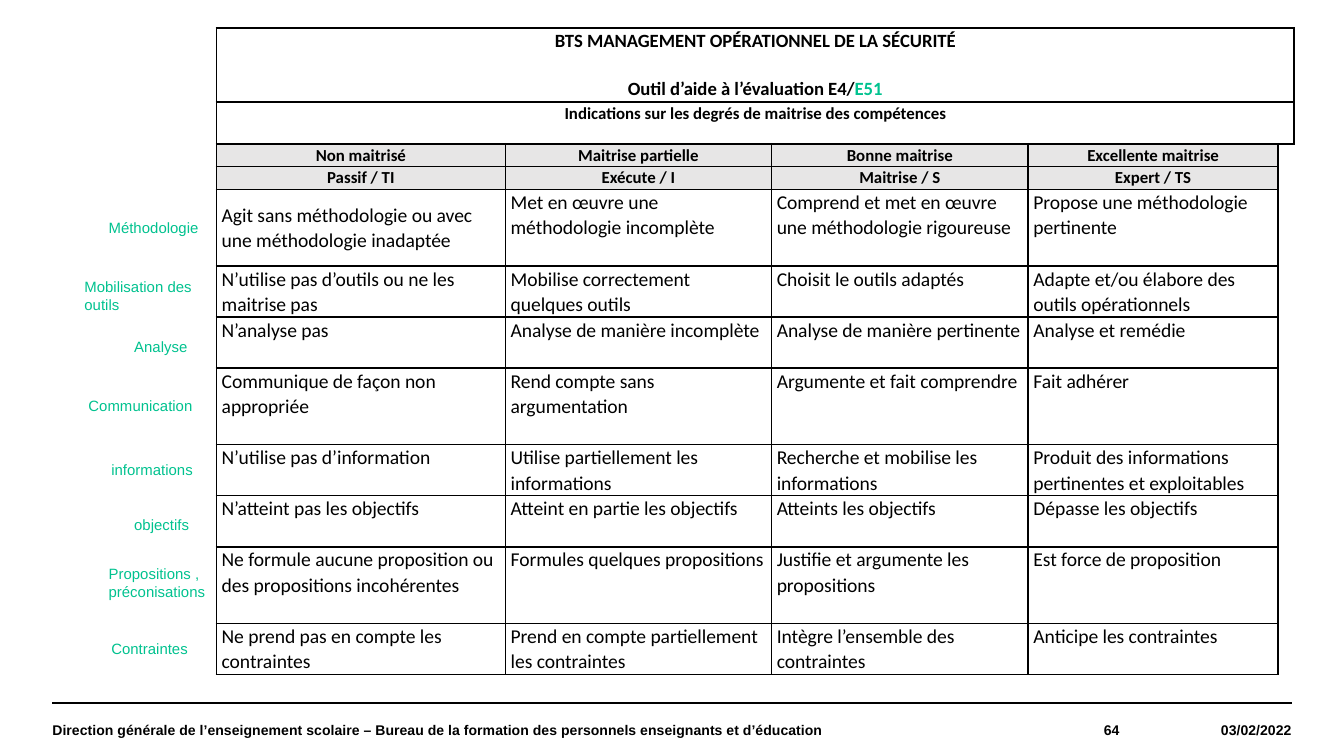
"""Build the evaluation grid slide for the BTS security management course."""
from dataclasses import dataclass
from itertools import accumulate

from pptx import Presentation
from pptx.dml.color import RGBColor
from pptx.enum.shapes import MSO_CONNECTOR as Connector
from pptx.enum.text import MSO_ANCHOR as Anchor, PP_ALIGN as Align
from pptx.oxml.xmlchemy import OxmlElement
from pptx.util import Inches, Pt


@dataclass(frozen=True)
class Theme:
    black: str = "000000"
    green: str = "00C28F"
    grey: str = "E7E6E6"
    table_font: str = "Calibri"
    side_font: str = "Arial"
    title: float = 10
    heading: float = 9
    body: float = 10.5
    label: float = 8
    footer: float = 7.5
    border: float = 1
    rule: float = 0.8
    spacing: float = 1.07
    plain_table: str = "{2D5ABB26-0587-4C30-8999-92F81FD0307C}"


THEME = Theme()
WIDTH, MARGIN = 10, 0.39
HEIGHT = WIDTH * 9 / 16

TITLE = ["BTS MANAGEMENT OPÉRATIONNEL DE LA SÉCURITÉ", "Outil d’aide à l’évaluation E4/"]
EXAM = "E51"
SUBTITLE = "Indications sur les degrés de maitrise des compétences"
LEVELS = [
    ("Non maitrisé", "Maitrise partielle", "Bonne maitrise", "Excellente maitrise"),
    ("Passif / TI", "Exécute / I", "Maitrise / S", "Expert / TS"),
]
SKILLS = [
    ("Agit sans méthodologie ou avec une méthodologie inadaptée",
     "Met en œuvre une méthodologie incomplète",
     "Comprend et met en œuvre une méthodologie rigoureuse",
     "Propose une méthodologie pertinente"),
    ("N’utilise pas d’outils ou ne les maitrise pas",
     "Mobilise correctement quelques outils",
     "Choisit le outils adaptés",
     "Adapte et/ou élabore des outils opérationnels"),
    ("N’analyse pas", "Analyse de manière incomplète",
     "Analyse de manière pertinente", "Analyse et remédie"),
    ("Communique de façon non appropriée", "Rend compte sans argumentation",
     "Argumente et fait comprendre", "Fait adhérer"),
    ("N’utilise pas d’information", "Utilise partiellement les informations",
     "Recherche et mobilise les informations",
     "Produit des informations pertinentes et exploitables"),
    ("N’atteint pas les objectifs", "Atteint en partie les objectifs",
     "Atteints les objectifs", "Dépasse les objectifs"),
    ("Ne formule aucune proposition ou des propositions incohérentes",
     "Formules quelques propositions",
     "Justifie et argumente les propositions", "Est force de proposition"),
    ("Ne prend pas en compte les contraintes",
     "Prend en compte partiellement les contraintes",
     "Intègre l’ensemble des contraintes", "Anticipe les contraintes"),
]
CRITERIA = [
    ("Méthodologie", 0.71, 0, 1),
    ("Mobilisation des outils", 0.53, 0.03, 2),
    ("Analyse", 0.9, 0.03, 1),
    ("Communication", 0.56, 0, 1),
    ("informations", 0.73, 0, 1),
    ("objectifs", 0.9, 0.03, 1),
    ("Propositions , préconisations", 0.71, -0.02, 2),
    ("Contraintes", 0.73, 0, 1),
]
FOOTER = [
    ("Direction générale de l’enseignement scolaire – Bureau de la formation "
     "des personnels enseignants et d’éducation", 6.46, Align.LEFT),
    ("64", 1.48, Align.RIGHT),
    ("03/02/2022", 1.28, Align.RIGHT),
]

GRID_LEFT, GRID_TOP = 1.61, 0.21
COLUMNS = [2.15, 1.98, 1.91, 1.86, 0.09]
SHORT, TALL = 0.38, 0.57
HEAD_ROWS = [0.55, 0.31, 0.17, 0.17]
ROWS = HEAD_ROWS + [TALL, SHORT, SHORT, TALL, SHORT, SHORT, TALL, SHORT]
ROW_TOPS = [GRID_TOP, *(GRID_TOP + bottom for bottom in accumulate(ROWS))]
LABEL_WIDTH, LABEL_HEIGHTS = 1.26, {1: 0.24, 2: 0.37}
FOOTER_TOP = 5.23
SIDES = {"left": "a:lnL", "right": "a:lnR", "top": "a:lnT", "bottom": "a:lnB"}


def style(font, family, size, color, bold=False):
    font.name, font.size, font.bold = family, Pt(size), bold
    font.color.rgb = RGBColor.from_string(color)


def add_text(slide, wording, box, size, color, bold=False, align=Align.LEFT):
    text = slide.shapes.add_textbox(*map(Inches, box)).text_frame
    text.word_wrap = True
    text.text = wording
    text.paragraphs[0].alignment = align
    style(text.paragraphs[0].runs[0].font, THEME.side_font, size, color, bold)
    return text


def outline(cell, sides):
    properties = cell._tc.get_or_add_tcPr()
    for side, tag in SIDES.items():
        edge = OxmlElement(tag)
        edge.set("w", str(Pt(THEME.border)))
        paint = OxmlElement("a:solidFill" if side in sides else "a:noFill")
        if side in sides:
            color = OxmlElement("a:srgbClr")
            color.set("val", THEME.black)
            paint.append(color)
        edge.append(paint)
        properties.append(edge)


def prepare(cell, sides, fill=None):
    outline(cell, sides)
    cell.margin_left = cell.margin_right = Inches(0.04)
    cell.margin_top = cell.margin_bottom = 0
    if fill:
        cell.fill.solid()
        cell.fill.fore_color.rgb = RGBColor.from_string(fill)
    else:
        cell.fill.background()


def write(cell, wording, size, bold=False, align=Align.LEFT):
    cell.text_frame.text = wording
    for paragraph in cell.text_frame.paragraphs:
        paragraph.alignment, paragraph.line_spacing = align, THEME.spacing
        for run in paragraph.runs:
            style(run.font, THEME.table_font, size, THEME.black, bold)
        if not paragraph.runs:
            ending = OxmlElement("a:endParaRPr")
            ending.set("sz", "100")
            paragraph._p.append(ending)


def add_grid(slide):
    frame = slide.shapes.add_table(
        len(ROWS), len(COLUMNS), Inches(GRID_LEFT), Inches(GRID_TOP),
        Inches(sum(COLUMNS)), Inches(sum(ROWS)))
    grid = frame.table
    grid.first_row = grid.horz_banding = False
    grid._tbl.tblPr.find("{*}tableStyleId").text = THEME.plain_table
    for column, width in zip(grid.columns, COLUMNS):
        column.width = Inches(width)
    for row, height in zip(grid.rows, ROWS):
        row.height = Inches(height)

    banners = ["\n".join(TITLE), SUBTITLE]
    contents = [(banner, "", "", "", "") for banner in banners]
    contents += [(*wordings, "") for wordings in LEVELS + SKILLS]
    first_level, first_skill = len(banners), len(HEAD_ROWS)
    for r, wordings in enumerate(contents):
        heading = r < first_skill
        size = THEME.title if r == 0 else THEME.heading if heading else THEME.body
        for c, wording in enumerate(wordings):
            cell = grid.cell(r, c)
            spare = r >= first_level and c == len(COLUMNS) - 1
            sides = ("left", "top") if r == first_level else ("left",)
            shaded = first_level <= r < first_skill and not spare
            prepare(cell, sides if spare else SIDES, THEME.grey if shaded else None)
            write(cell, wording, size, heading, Align.CENTER if heading else Align.LEFT)
    for r in range(first_level):
        grid.cell(r, 0).merge(grid.cell(r, len(COLUMNS) - 1))
    grid.cell(first_skill, 0).vertical_anchor = Anchor.MIDDLE

    course, tool = grid.cell(0, 0).text_frame.paragraphs[:2]
    course.space_after = Pt(13)
    exam = tool.add_run()
    exam.text = EXAM
    style(exam.font, THEME.table_font, THEME.title, THEME.green, True)


def add_criteria(slide):
    for r, (wording, left, drop, lines) in enumerate(CRITERIA, len(HEAD_ROWS)):
        height = LABEL_HEIGHTS[lines]
        top = ROW_TOPS[r] + (ROWS[r] - height) / 2 + drop
        add_text(slide, wording, (left, top, LABEL_WIDTH, height), THEME.label, THEME.green)


def add_footer(slide):
    rule = slide.shapes.add_connector(
        Connector.STRAIGHT, Inches(MARGIN), Inches(FOOTER_TOP),
        Inches(WIDTH - MARGIN), Inches(FOOTER_TOP))
    rule.line.color.rgb = RGBColor.from_string(THEME.black)
    rule.line.width = Pt(THEME.rule)
    rule._element.spPr.append(OxmlElement("a:effectLst"))
    left = MARGIN
    for wording, width, align in FOOTER:
        box = (left, FOOTER_TOP, width, HEIGHT - FOOTER_TOP)
        text = add_text(slide, wording, box, THEME.footer, THEME.black, True, align)
        text.vertical_anchor = Anchor.MIDDLE
        text.margin_left = text.margin_right = text.margin_top = text.margin_bottom = 0
        left += width


def main():
    deck = Presentation()
    deck.slide_width, deck.slide_height = Inches(WIDTH), Inches(HEIGHT)
    slide = deck.slides.add_slide(deck.slide_layouts[6])
    add_footer(slide)
    add_grid(slide)
    add_criteria(slide)
    deck.save("out.pptx")


if __name__ == "__main__":
    main()
